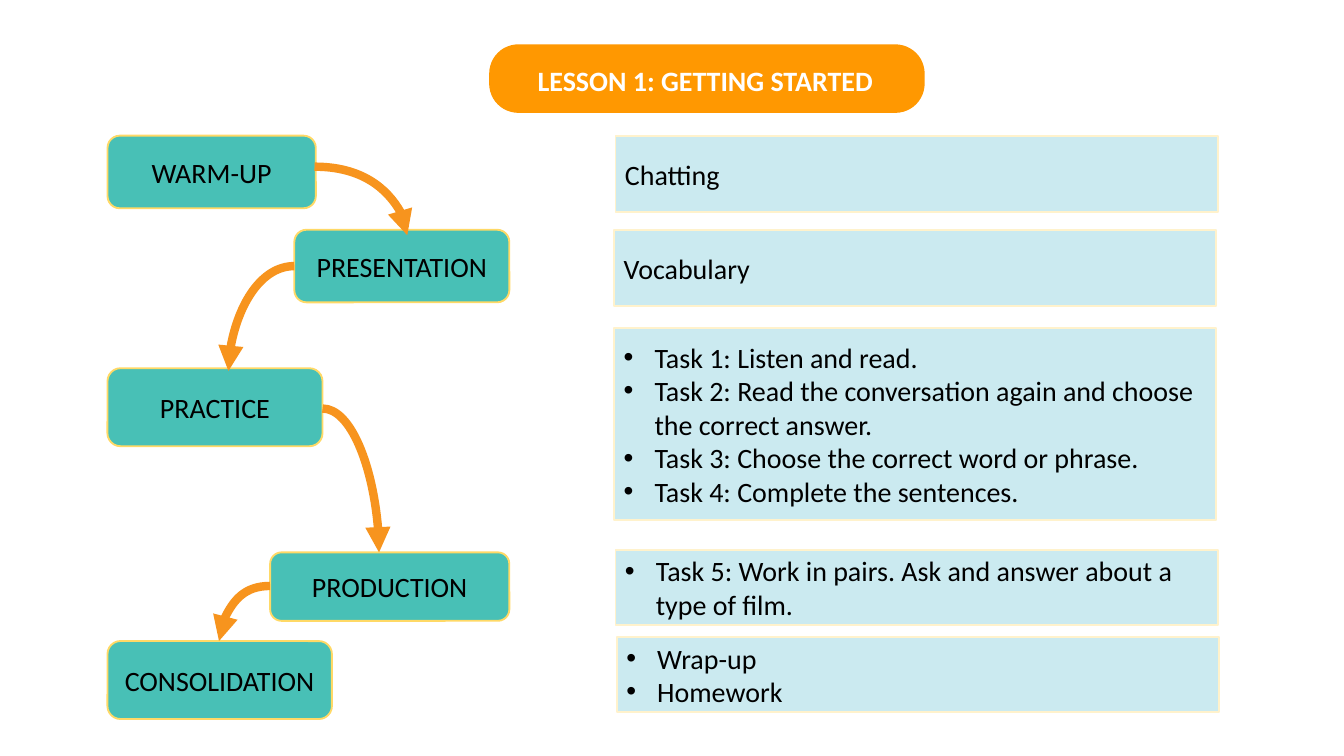
"""Build the lesson outline slide: stages on the left, activities on the right."""
from dataclasses import dataclass

from lxml import etree
from pptx import Presentation
from pptx import util as u
from pptx.dml.color import RGBColor
from pptx.enum import shapes, text
from pptx.oxml import ns

HUES = {
    "teal": "48C0B6", "gold": "FFD966", "sky": "CBEAF0", "cream": "FFF2CC",
    "arrow": "F7941E", "banner": "FF9801", "black": "000000", "white": "FFFFFF",
}
FONT, SIZE = "Calibri", 15
WIDE = 10
KIND = shapes.MSO_SHAPE
ALIGN = text.PP_ALIGN


@dataclass
class Stage:
    name: str
    left: float
    top: float
    width: float
    height: float


@dataclass
class Panel:
    lines: list[str]
    left: float
    top: float
    height: float
    listed: bool = True


@dataclass
class Arrow:
    start: tuple[float, float]
    end: tuple[float, float]


STAGES = [
    Stage("WARM-UP", 0.8, 1.01, 1.55, 0.54),
    Stage("PRESENTATION", 2.19, 1.71, 1.6, 0.54),
    Stage("PRACTICE", 0.8, 2.74, 1.6, 0.58),
    Stage("PRODUCTION", 2.01, 4.11, 1.78, 0.51),
    Stage("CONSOLIDATION", 0.8, 4.77, 1.67, 0.58),
]
PANELS = [
    Panel(["Chatting"], 4.58, 1.01, 0.57, False),
    Panel(["Vocabulary"], 4.57, 1.71, 0.57, False),
    Panel([
        "Task 1: Listen and read.",
        "Task 2: Read the conversation again and choose the correct answer.",
        "Task 3: Choose the correct word or phrase.",
        "Task 4: Complete the sentences.",
    ], 4.57, 2.44, 1.43),
    Panel(["Task 5: Work in pairs. Ask and answer about a type of film."], 4.58, 4.09, 0.56),
    Panel(["Wrap-up", "Homework"], 4.59, 4.74, 0.56),
]
ARROWS = [
    Arrow((2.34, 1.24), (3.03, 1.75)),
    Arrow((2.19, 1.98), (1.7, 2.76)),
    Arrow((2.4, 3.04), (2.82, 4.11)),
    Arrow((2.01, 4.36), (1.63, 4.77)),
]


def tint(name: str) -> RGBColor:
    """Return a named colour."""
    return RGBColor.from_string(HUES[name])


def add_box(slide, kind, area: tuple, fill: str, edge: str | None = None, round_by: float | None = None):
    """Add a filled shape with an optional outline and corner size."""
    box = slide.shapes.add_shape(kind, *map(u.Inches, area))
    box.shadow.inherit = False
    box.fill.solid()
    box.fill.fore_color.rgb = tint(fill)
    if edge:
        box.line.color.rgb = tint(edge)
        box.line.width = u.Pt(1)
    else:
        box.line.fill.background()
    if round_by is not None:
        box.adjustments[0] = round_by
    return box


def add_bullet(para) -> None:
    """Give a paragraph a hanging round bullet."""
    props = para._p.get_or_add_pPr()
    props.set("marL", str(u.Inches(0.23)))
    props.set("indent", str(-u.Inches(0.23)))
    hue = etree.SubElement(props, ns.qn("a:buClr"))
    etree.SubElement(hue, ns.qn("a:srgbClr"), val=HUES["black"])
    etree.SubElement(props, ns.qn("a:buFont"), typeface="Arial")
    etree.SubElement(props, ns.qn("a:buChar"), char="•")


def write(shape, lines: list[str], align, hue: str = "black", bold: bool = False,
          listed: bool = False, anchor=text.MSO_ANCHOR.MIDDLE) -> None:
    """Write one paragraph per line into a shape."""
    frame = shape.text_frame
    frame.word_wrap = True
    frame.auto_size = text.MSO_AUTO_SIZE.NONE
    frame.vertical_anchor = anchor
    frame.margin_left = frame.margin_right = u.Inches(0.07)
    frame.margin_top = frame.margin_bottom = u.Inches(0.04)
    for i, line in enumerate(lines):
        para = frame.add_paragraph() if i else frame.paragraphs[0]
        para.alignment = align
        if listed:
            add_bullet(para)
        run = para.add_run()
        run.text = line
        run.font.name = FONT
        run.font.size = u.Pt(SIZE)
        run.font.bold = bold
        run.font.color.rgb = tint(hue)


def add_stage(slide, stage: Stage) -> None:
    """Add a rounded stage box."""
    area = (stage.left, stage.top, stage.width, stage.height)
    box = add_box(slide, KIND.ROUNDED_RECTANGLE, area, "teal", "gold", 0.167)
    write(box, [stage.name], ALIGN.CENTER)


def add_panel(slide, panel: Panel) -> None:
    """Add an activity panel."""
    area = (panel.left, panel.top, 4.48, panel.height)
    box = add_box(slide, KIND.RECTANGLE, area, "sky", "cream")
    write(box, panel.lines, ALIGN.LEFT, listed=panel.listed)


def add_arrow(slide, arrow: Arrow) -> None:
    """Add a quarter-curve arrow between two stages."""
    ends = map(u.Inches, arrow.start + arrow.end)
    link = slide.shapes.add_connector(shapes.MSO_CONNECTOR.CURVE, *ends)
    link.line.color.rgb = tint("arrow")
    link.line.width = u.Pt(4.5)
    props = link.element.spPr
    props.find(ns.qn("a:prstGeom")).set("prst", "curvedConnector2")
    etree.SubElement(props.find(ns.qn("a:ln")), ns.qn("a:tailEnd"), type="triangle")
    etree.SubElement(props, ns.qn("a:effectLst"))


def add_title(slide) -> None:
    """Add the banner and set the title on top of it."""
    add_box(slide, KIND.ROUNDED_RECTANGLE, (3.64, 0.33, 3.24, 0.51), "banner", round_by=0.427)
    title = slide.shapes.title
    title.left, title.top, title.width, title.height = map(u.Inches, (3.93, 0.43, 2.95, 0.33))
    write(title, ["LESSON 1: GETTING STARTED"], ALIGN.LEFT, "white", True,
          anchor=text.MSO_ANCHOR.TOP)
    slide.shapes.element.append(title.element)


def main() -> None:
    """Build and save the slide."""
    deck = Presentation()
    deck.slide_width, deck.slide_height = u.Inches(WIDE), u.Inches(WIDE * 9 / 16)
    slide = deck.slides.add_slide(deck.slide_layouts[5])
    for stage in STAGES:
        add_stage(slide, stage)
    for panel in PANELS:
        add_panel(slide, panel)
    for arrow in ARROWS:
        add_arrow(slide, arrow)
    add_title(slide)
    deck.save("out.pptx")


if __name__ == "__main__":
    main()
